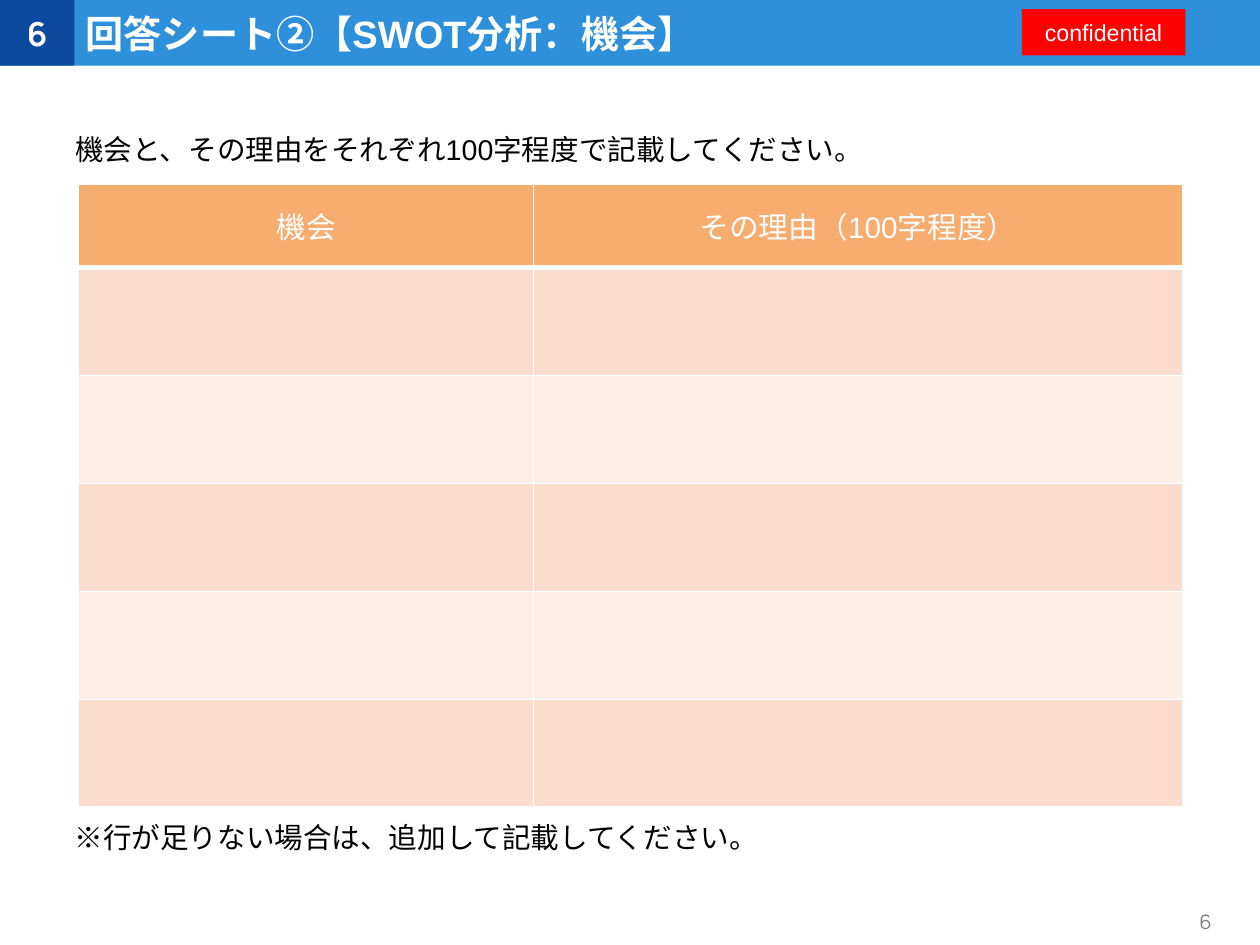
from lxml import etree
from pptx import Presentation
from pptx.dml.color import RGBColor
from pptx.enum.shapes import MSO_SHAPE
from pptx.enum.text import MSO_ANCHOR, MSO_AUTO_SIZE, PP_ALIGN
from pptx.oxml.ns import qn
from pptx.util import Pt

RECT = MSO_SHAPE.RECTANGLE
LEFT, CENTER = PP_ALIGN.LEFT, PP_ALIGN.CENTER
TOP, MIDDLE = MSO_ANCHOR.TOP, MSO_ANCHOR.MIDDLE
NO_AUTOFIT = MSO_AUTO_SIZE.NONE

BLUE = RGBColor(0x2E, 0x8F, 0xDA)
NAVY = RGBColor(0x0D, 0x49, 0x9E)
RED = RGBColor(0xFF, 0x00, 0x00)
WHITE = RGBColor(0xFF, 0xFF, 0xFF)
BLACK = RGBColor(0x00, 0x00, 0x00)
GREY = RGBColor(0x7F, 0x7F, 0x7F)
ORANGE = RGBColor(0xF7, 0xAD, 0x70)
PEACH = RGBColor(0xFC, 0xDC, 0xCE)
PALE_PEACH = RGBColor(0xFD, 0xEE, 0xE8)

PAGE = "6"


def write(tf, text, size, color, font="Arial", bold=False, align=LEFT,
          anchor=MIDDLE, margins=(7.2, 3.6), spacing=1.0):
    """Fill a text frame or table cell's frame with one formatted paragraph."""
    side, edge = margins
    frame = {"word_wrap": True, "vertical_anchor": anchor,
             "margin_left": Pt(side), "margin_right": Pt(side),
             "margin_top": Pt(edge), "margin_bottom": Pt(edge)}
    for name, value in frame.items():
        setattr(tf, name, value)
    p = tf.paragraphs[0]
    p.alignment, p.line_spacing = align, spacing
    r = p.add_run()
    r.text = text
    for name, value in {"name": font, "size": Pt(size), "bold": bold}.items():
        setattr(r.font, name, value)
    r.font.color.rgb = color


def add_block(s, box, color):
    shape = s.shapes.add_shape(RECT, *map(Pt, box))
    shape.shadow.inherit = False
    shape.fill.solid()
    shape.fill.fore_color.rgb = color
    shape.line.fill.background()
    return shape


def add_text(s, box, text, size, color, **style):
    sp = s.shapes.add_textbox(*map(Pt, box))
    write(sp.text_frame, text, size, color, **style)


def add_header(s, box, text):
    x, y, w, h = box
    number_w = 46.8
    add_block(s, box, BLUE)
    label = add_block(s, (x + 643.7, y + 5.8, 103, 29.2), RED)
    write(label.text_frame, "confidential", 14.6, WHITE, align=CENTER)
    number = add_block(s, (x, y, number_w, h), NAVY)
    write(number.text_frame, PAGE, 20.8, WHITE, font="Manrope", bold=True,
          align=CENTER)

    title = s.shapes.title
    title.element.getparent().append(title.element)  # in front of the band
    title.left, title.top = Pt(x + number_w), Pt(y)
    title.width, title.height = Pt(592), Pt(h)
    title.text_frame.auto_size = NO_AUTOFIT
    write(title.text_frame, text, 24, WHITE, bold=True)


def set_borders(cell, bottom):
    """White 1 pt borders, with the given width in points at the bottom."""
    tcPr = cell._tc.get_or_add_tcPr()
    for side, width in {"L": 1, "R": 1, "T": 1, "B": bottom}.items():
        ln = etree.SubElement(tcPr, qn("a:ln" + side), w=str(Pt(width)))
        fill = etree.SubElement(ln, qn("a:solidFill"))
        etree.SubElement(fill, qn("a:srgbClr"), val=str(WHITE))


def add_answer_table(s, box, headings, blank_rows, header_h, first_col_w):
    x, y, w, h = box
    rows = blank_rows + 1
    table = s.shapes.add_table(rows, len(headings), *map(Pt, box)).table
    for col, width in zip(table.columns, (first_col_w, w - first_col_w)):
        col.width = Pt(width)
    for i, row in enumerate(table.rows):
        row.height = Pt((h - header_h) / blank_rows if i else header_h)
        color = (PEACH if i % 2 else PALE_PEACH) if i else ORANGE
        for cell, heading in zip(row.cells, headings):
            set_borders(cell, 1 if i else 3)
            cell.fill.solid()
            cell.fill.fore_color.rgb = color
            if i == 0:
                cell.vertical_anchor = MIDDLE
                write(cell.text_frame, heading, 18.7, WHITE, align=CENTER)


def main():
    prs = Presentation()
    prs.slide_width, prs.slide_height = Pt(793.7), Pt(595.3)
    s = prs.slides.add_slide(prs.slide_layouts[5])

    add_header(s, (0, 0, 793.7, 41.4), "回答シート②【SWOT分析：機会】")
    add_answer_table(s, (49.6, 116.2, 695.2, 392.4),
                     ("機会", "その理由（100字程度）"), blank_rows=5,
                     header_h=52.4, first_col_w=286.6)
    note = {"anchor": TOP, "margins": (0, 0), "spacing": 1.5}
    add_text(s, (47.5, 72, 700, 29.5),
             "機会と、その理由をそれぞれ100字程度で記載してください。",
             18, BLACK, **note)
    add_text(s, (47, 506, 677.5, 32.4),
             "※行が足りない場合は、追加して記載してください。",
             18, BLACK, **note)
    add_text(s, (736, 560, 46.8, 41.4), PAGE, 12.5, GREY, font="Manrope",
             align=CENTER)
    prs.save("out.pptx")


if __name__ == "__main__":
    main()
